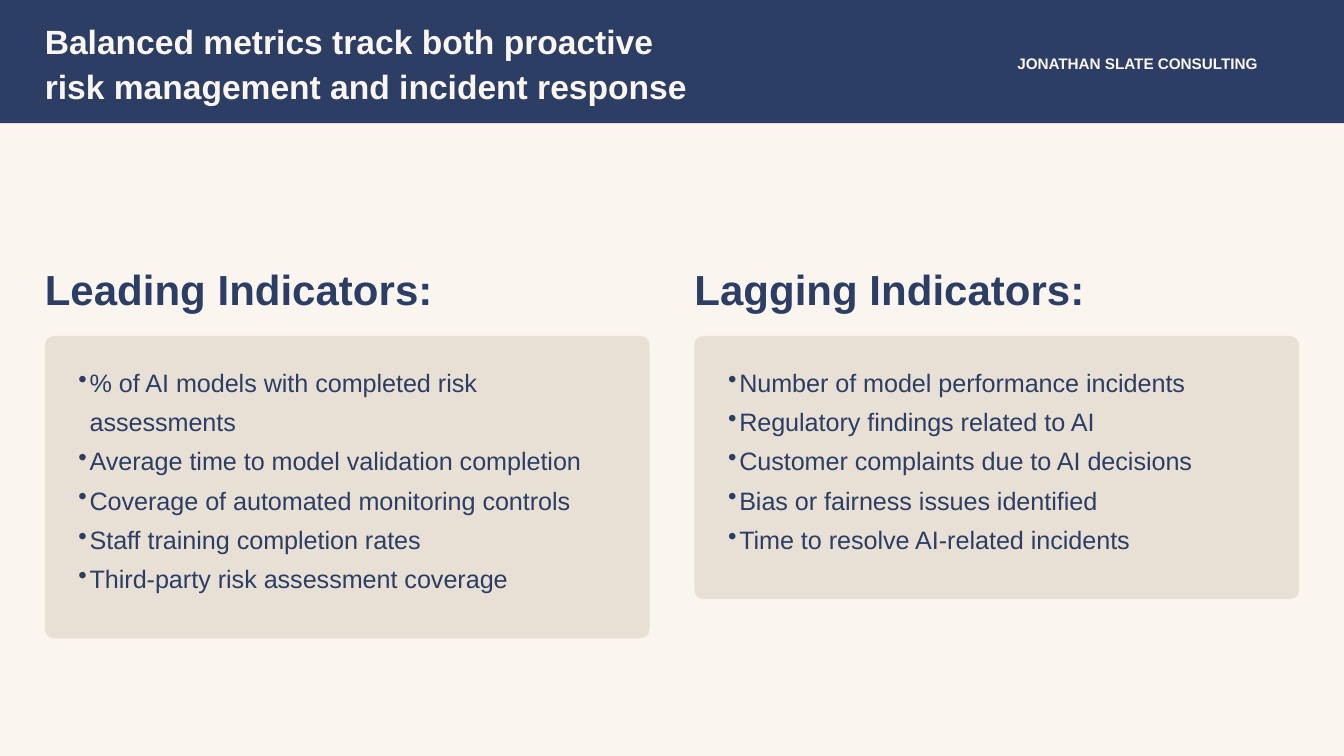
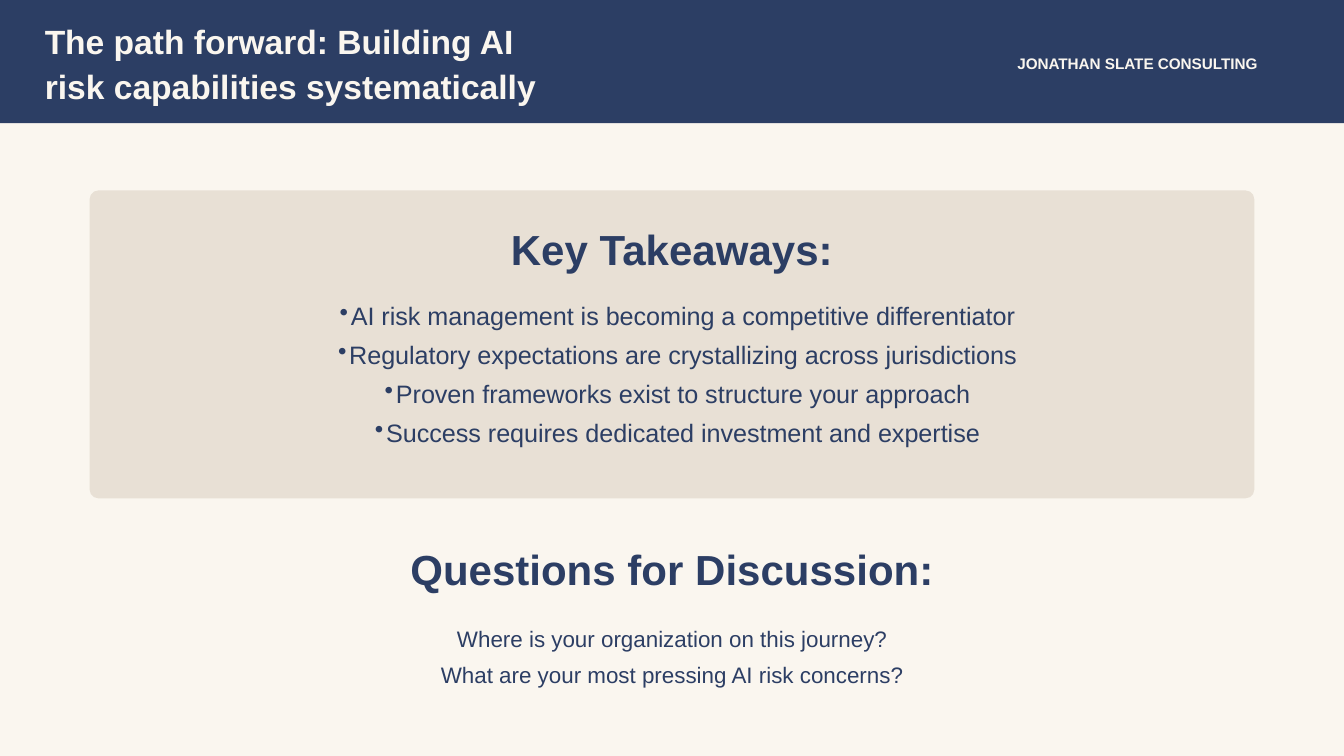
from lxml.etree import SubElement
from pptx import Presentation
from pptx.dml.color import RGBColor
from pptx.enum.shapes import MSO_SHAPE
from pptx.enum.text import PP_ALIGN
from pptx.oxml.ns import qn
from pptx.util import Pt

COLORS = {"navy": "2C3E64", "cream": "FAF6EF", "sand": "E8E0D5"}
WIDTH, HEIGHT = 720, 405
BAND, MARGIN, PAD, INDENT = 66, 24, 12, 6
RADIUS = 4.8

STYLES = {
    "title": {"size": 18, "bold": True, "color": "cream", "line": 24},
    "brand": {"size": 8.2, "bold": True, "color": "cream", "line": 11.6},
    "head": {"size": 22.5, "bold": True, "color": "navy", "line": 27},
    "list": {"size": 13.5, "bold": False, "color": "navy", "line": 21},
    "ask": {"size": 12, "bold": False, "color": "navy", "line": 19.2},
}

BRAND = "JONATHAN SLATE CONSULTING"
METRICS = [
    ("Leading Indicators:", 6, [
        "% of AI models with completed risk assessments",
        "Average time to model validation completion",
        "Coverage of automated monitoring controls",
        "Staff training completion rates",
        "Third-party risk assessment coverage",
    ]),
    ("Lagging Indicators:", 5, [
        "Number of model performance incidents",
        "Regulatory findings related to AI",
        "Customer complaints due to AI decisions",
        "Bias or fairness issues identified",
        "Time to resolve AI-related incidents",
    ]),
]
TAKEAWAYS = [
    "AI risk management is becoming a competitive differentiator",
    "Regulatory expectations are crystallizing across jurisdictions",
    "Proven frameworks exist to structure your approach",
    "Success requires dedicated investment and expertise",
]
QUESTIONS = [
    "Where is your organization on this journey?",
    "What are your most pressing AI risk concerns?",
]


def paint(fill, name):
    fill.solid()
    fill.fore_color.rgb = RGBColor.from_string(COLORS[name])


def add_box(slide, kind, box, color):
    shape = slide.shapes.add_shape(kind, *map(Pt, box))
    shape.shadow.inherit = False
    paint(shape.fill, color)
    shape.line.fill.background()
    return shape


def add_panel(slide, box):
    shape = add_box(slide, MSO_SHAPE.ROUNDED_RECTANGLE, box, "sand")
    shape.adjustments[0] = RADIUS / min(box[2:])


def add_bullet(para):
    props = para._p.get_or_add_pPr()
    props.set("marL", str(Pt(INDENT)))
    props.set("indent", str(-Pt(INDENT)))
    SubElement(props, qn("a:buChar")).set("char", "•")


def add_text(slide, box, lines, style, align=PP_ALIGN.LEFT, after=0):
    """Place one paragraph per line; the "list" style gets bullets."""
    look = STYLES[style]
    frame = slide.shapes.add_textbox(*map(Pt, box)).text_frame
    frame.word_wrap = True
    for side in ("left", "top", "right", "bottom"):
        setattr(frame, f"margin_{side}", 0)
    if style == "list":
        frame.margin_left = Pt(INDENT)
    for i, line in enumerate(lines):
        para = frame.add_paragraph() if i else frame.paragraphs[0]
        formats = {"alignment": align, "line_spacing": Pt(look["line"]),
                   "space_after": Pt(after)}
        for key, value in formats.items():
            setattr(para, key, value)
        if style == "list":
            add_bullet(para)
        run = para.add_run()
        run.text = line
        fonts = {"name": "Arial", "size": Pt(look["size"]), "bold": look["bold"]}
        for key, value in fonts.items():
            setattr(run.font, key, value)
        run.font.color.rgb = RGBColor.from_string(COLORS[look["color"]])


def add_slide(deck, title, width):
    """Start a slide with its background, title band and brand name."""
    slide = deck.slides.add_slide(deck.slide_layouts[6])
    paint(slide.background.fill, "cream")
    add_box(slide, MSO_SHAPE.RECTANGLE, (0, 0, WIDTH, BAND), "navy")
    add_text(slide, (MARGIN, 9, width, 48), [title], "title")
    add_text(slide, (545, 27.4, 154, 11.6), [BRAND], "brand")
    return slide


def add_metrics(slide):
    gap = 24
    width = (WIDTH - 2 * MARGIN - gap) / 2
    top = 180
    for i, (head, rows, items) in enumerate(METRICS):
        left = MARGIN + i * (width + gap)
        high = rows * STYLES["list"]["line"] + 3 * PAD
        add_text(slide, (left, 141, 330.5, 27), [head], "head")
        add_panel(slide, (left, top, width, high))
        inner = (left + PAD, top + PAD, width - 2 * PAD, high - 2 * PAD)
        add_text(slide, inner, items, "list")


def add_closing(slide):
    mid = PP_ALIGN.CENTER
    add_panel(slide, (48, 102, 624, 165))
    add_text(slide, (60, 120, 600, 27), ["Key Takeaways:"], "head", mid, 9)
    add_text(slide, (66, 156, 588, 93), TAKEAWAYS, "list", mid)
    left, width = 217.2, 286
    add_text(slide, (left, 291.3, width, 27), ["Questions for Discussion:"],
             "head", mid, 12)
    add_text(slide, (left, 330.3, width, 38.4), QUESTIONS, "ask", mid)


def main():
    deck = Presentation()
    deck.slide_width, deck.slide_height = Pt(WIDTH), Pt(HEIGHT)
    add_metrics(add_slide(
        deck, "Balanced metrics track both proactive risk management "
              "and incident response", 351))
    add_closing(add_slide(
        deck, "The path forward: Building AI risk capabilities "
              "systematically", 268.5))
    deck.save("out.pptx")


if __name__ == "__main__":
    main()
